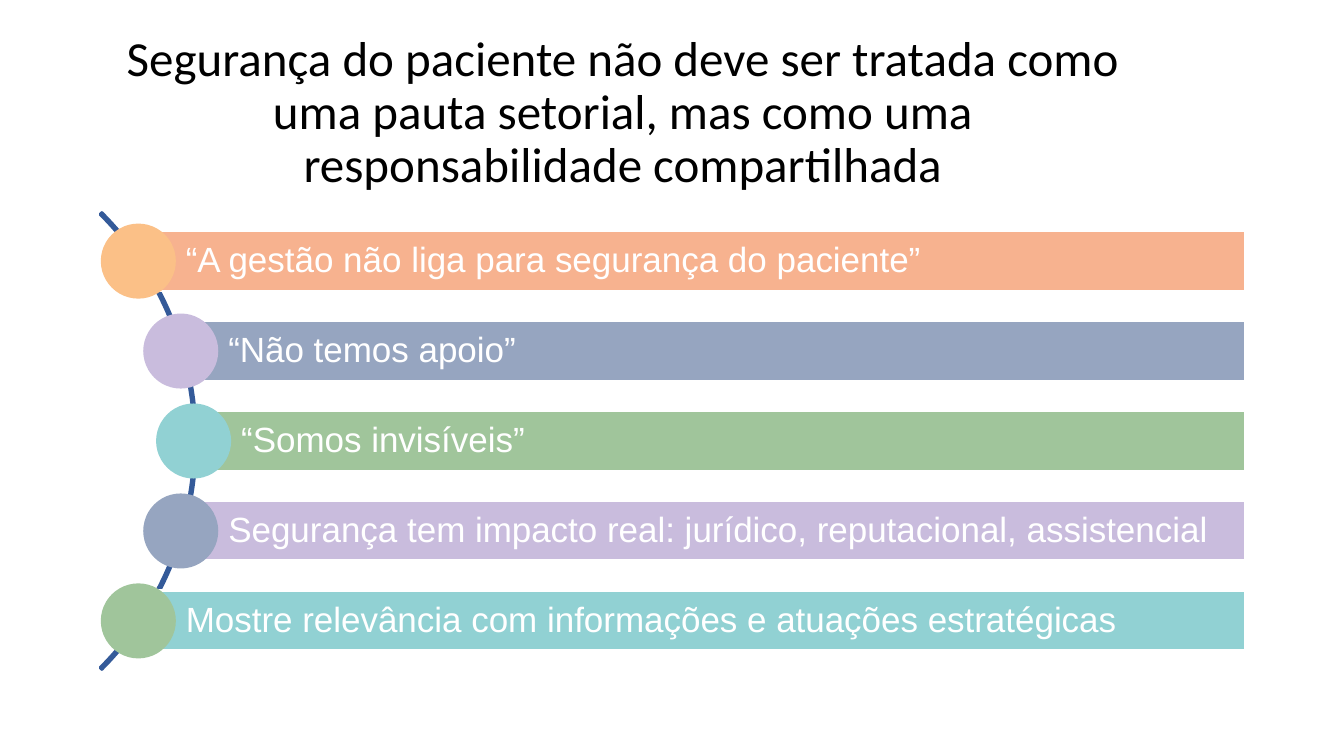
from math import sqrt

from pptx import Presentation
from pptx.dml.color import RGBColor
from pptx.enum.shapes import MSO_SHAPE
from pptx.enum.text import MSO_ANCHOR, PP_ALIGN
from pptx.util import Pt

BLACK = RGBColor(0x00, 0x00, 0x00)
WHITE = RGBColor(0xFF, 0xFF, 0xFF)
NAVY = RGBColor(0x34, 0x5A, 0x99)
SALMON = RGBColor(0xF7, 0xB2, 0x8F)
ORANGE = RGBColor(0xFB, 0xC0, 0x87)
SLATE = RGBColor(0x96, 0xA5, 0xC0)
LILAC = RGBColor(0xC9, 0xBC, 0xDD)
GREEN = RGBColor(0xA0, 0xC5, 0x9B)
TEAL = RGBColor(0x91, 0xD1, 0xD3)

TITLE = (
    "Segurança do paciente não deve ser tratada como uma pauta setorial, "
    "mas como uma responsabilidade compartilhada"
)
MESSAGES = [
    ("“A gestão não liga para segurança do paciente”", SALMON, ORANGE),
    ("“Não temos apoio”", SLATE, LILAC),
    ("“Somos invisíveis”", GREEN, TEAL),
    ("Segurança tem impacto real: jurídico, reputacional, assistencial", LILAC, SLATE),
    ("Mostre relevância com informações e atuações estratégicas", TEAL, GREEN),
]

ARC_X, ARC_Y, ARC_RADIUS = -90.4, 315, 230.75
ORBIT_RADIUS = 228.7
ROW_PITCH = 64.25
BAR_RIGHT, BAR_HEIGHT = 889.6, 42.9
DOT_SIZE = 53.6


def write_text(shape, text, *, font, size, color, align, margins):
    """Write one formatted paragraph, vertically centred, in a shape."""
    frame = shape.text_frame
    frame.word_wrap = True
    frame.vertical_anchor = MSO_ANCHOR.MIDDLE
    left, top, right, bottom = margins
    frame.margin_left, frame.margin_top = Pt(left), Pt(top)
    frame.margin_right, frame.margin_bottom = Pt(right), Pt(bottom)
    para = frame.paragraphs[0]
    para.alignment = align
    para.line_spacing = 0.9
    span = para.add_run()
    span.text = text
    span.font.name = font
    span.font.size = Pt(size)
    span.font.color.rgb = color


def add_figure(page, kind, left, top, width, height, fill=None, line=None):
    """Add a preset shape with an optional fill and a 2 pt outline."""
    shape = page.shapes.add_shape(kind, Pt(left), Pt(top), Pt(width), Pt(height))
    shape.shadow.inherit = False
    if fill is None:
        shape.fill.background()
    else:
        shape.fill.solid()
        shape.fill.fore_color.rgb = fill
    if line is None:
        shape.line.fill.background()
    else:
        shape.line.color.rgb = line
        shape.line.width = Pt(2)
    return shape


def add_title(page):
    """Add the centred slide title."""
    box = page.shapes.add_textbox(Pt(66), Pt(28.8), Pt(758.2), Pt(104.4))
    write_text(box, TITLE, font="Calibri", size=35, color=BLACK,
               align=PP_ALIGN.CENTER, margins=(7.2, 3.6, 7.2, 3.6))


def add_arc(page):
    """Add the thin arc that links the dots."""
    arc = add_figure(page, MSO_SHAPE.BLOCK_ARC, ARC_X - ARC_RADIUS, ARC_Y - ARC_RADIUS,
                     2 * ARC_RADIUS, 2 * ARC_RADIUS, line=NAVY)
    for index, value in enumerate((189, 27, 0.004)):
        arc.adjustments[index] = value


def add_message(page, offset, text, bar_color, dot_color):
    """Add a bar with its dot, placed on the arc at a vertical offset."""
    x = ARC_X + sqrt(ORBIT_RADIUS ** 2 - offset ** 2)
    y = ARC_Y + offset
    bar = add_figure(page, MSO_SHAPE.RECTANGLE, x, y - BAR_HEIGHT / 2,
                     BAR_RIGHT - x, BAR_HEIGHT, fill=bar_color, line=WHITE)
    write_text(bar, text, font="Arial", size=25, color=WHITE,
               align=PP_ALIGN.LEFT, margins=(34, 5, 5, 5))
    add_figure(page, MSO_SHAPE.OVAL, x - DOT_SIZE / 2, y - DOT_SIZE / 2,
               DOT_SIZE, DOT_SIZE, fill=dot_color)


def main():
    """Build and save the slide."""
    deck = Presentation()
    deck.slide_width, deck.slide_height = Pt(960), Pt(540)
    page = deck.slides.add_slide(deck.slide_layouts[6])
    add_title(page)
    add_arc(page)
    middle = len(MESSAGES) // 2
    for row, message in enumerate(MESSAGES):
        add_message(page, (row - middle) * ROW_PITCH, *message)
    deck.save("out.pptx")


if __name__ == "__main__":
    main()
